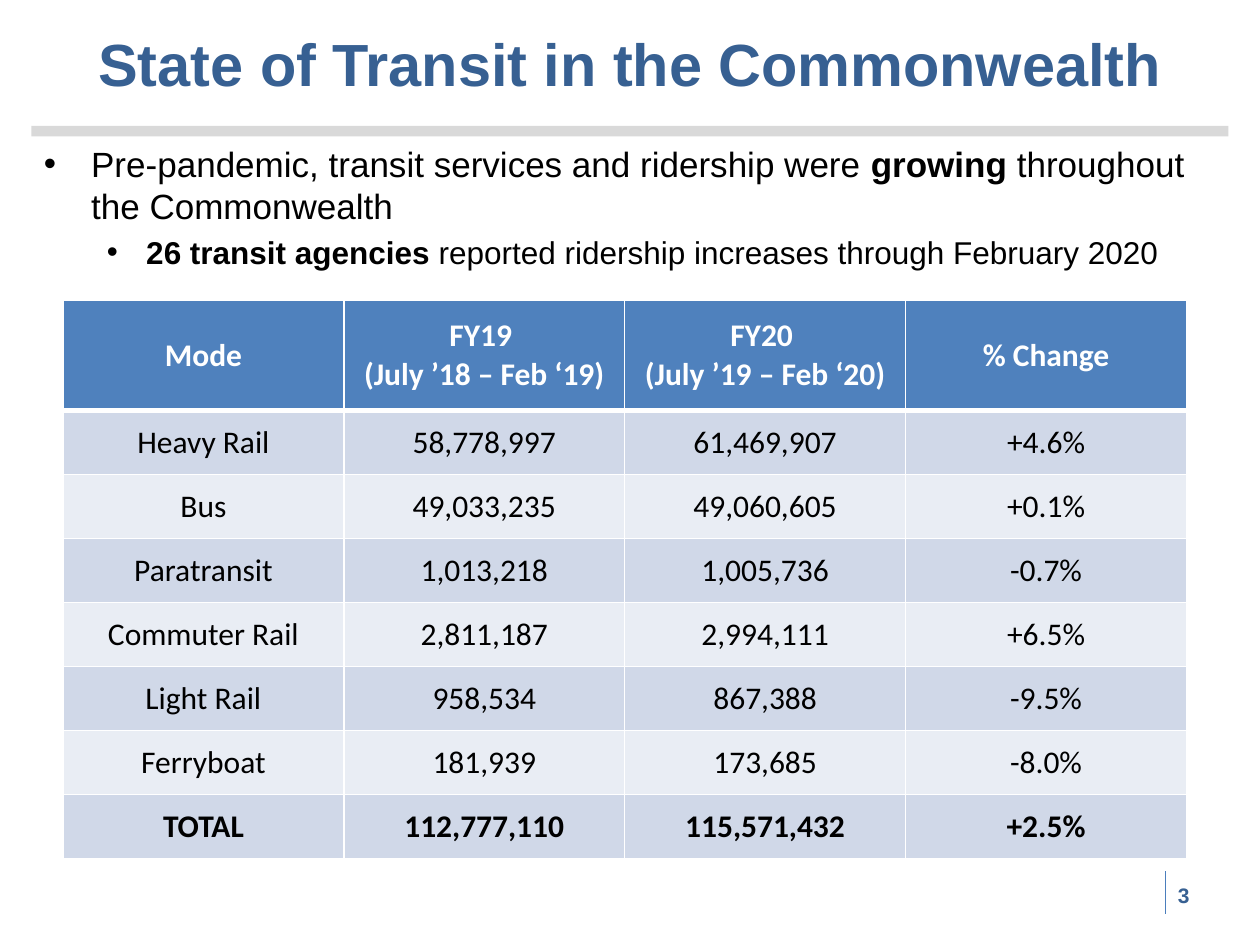
from dataclasses import dataclass

from lxml import etree
from pptx import Presentation
from pptx import util as u
from pptx.dml.color import RGBColor
from pptx.enum import shapes, text
from pptx.oxml import ns

BLUE, BLACK, WHITE = "376092", "000000", "FFFFFF"
HEADER_FILL, BAND_FILLS = "4F81BD", ("D0D8E8", "E9EDF4")


@dataclass(frozen=True)
class Box:
    left: float
    top: float
    width: float
    height: float

    def lengths(self) -> list[u.Length]:
        return [u.Pt(v) for v in (self.left, self.top, self.width, self.height)]


@dataclass(frozen=True)
class Bullet:
    phrases: tuple[tuple[str, bool], ...]  # wording, bold
    size: float
    level: int
    margin: float
    hanging: float
    space_before: float


BULLETS = (
    Bullet((("Pre-pandemic, transit services and ridership were ", False),
            ("growing", True), (" throughout the Commonwealth", False)),
           20, 0, 27, 27, 0),
    Bullet((("26 transit agencies ", True),
            ("reported ridership increases through February 2020", False)),
           18, 1, 58.5, 22.5, 3.6),
)

RIDERSHIP = (
    ("Mode", "FY19 \n(July ’18 – Feb ‘19)", "FY20 \n(July ’19 – Feb ‘20)", "% Change"),
    ("Heavy Rail", "58,778,997", "61,469,907", "+4.6%"),
    ("Bus", "49,033,235", "49,060,605", "+0.1%"),
    ("Paratransit", "1,013,218", "1,005,736", "-0.7%"),
    ("Commuter Rail", "2,811,187", "2,994,111", "+6.5%"),
    ("Light Rail", "958,534", "867,388", "-9.5%"),
    ("Ferryboat", "181,939", "173,685", "-8.0%"),
    ("TOTAL", "112,777,110", "115,571,432", "+2.5%"),
)


def paint(color_format, color: str) -> None:
    """Apply a hex colour to a fill's foreground, a line or a font colour."""
    color_format.rgb = RGBColor.from_string(color)


def fill_solid(target, color: str) -> None:
    target.fill.solid()
    paint(target.fill.fore_color, color)


def add_text(paragraph, wording: str, *, size: float, color: str = BLACK,
             bold: bool = False, font: str = "Arial", align=None) -> None:
    if align is not None:
        paragraph.alignment = align
    run = paragraph.add_run()
    run.text = wording
    run.font.name, run.font.size, run.font.bold = font, u.Pt(size), bold
    paint(run.font.color, color)


def add_frame(slide, box: Box, anchor=text.MSO_ANCHOR.TOP):
    frame = slide.shapes.add_textbox(*box.lengths()).text_frame
    frame.word_wrap = True
    frame.vertical_anchor = anchor
    return frame


def add_bullet(paragraph, bullet: Bullet) -> None:
    properties = paragraph._p.get_or_add_pPr()
    properties.set("marL", str(u.Pt(bullet.margin)))
    properties.set("indent", str(-u.Pt(bullet.hanging)))
    etree.SubElement(properties, ns.qn("a:buFont"), typeface="Arial")
    etree.SubElement(properties, ns.qn("a:buChar"), char="•")
    paragraph.level = bullet.level
    paragraph.space_before = u.Pt(bullet.space_before)
    for wording, bold in bullet.phrases:
        add_text(paragraph, wording, size=bullet.size, bold=bold)


def set_borders(cell, bottom: float, others: float = 1) -> None:
    properties = cell._tc.get_or_add_tcPr()
    widths = {"lnL": others, "lnR": others, "lnT": others, "lnB": bottom}
    for index, (edge, width) in enumerate(widths.items()):
        line = etree.Element(ns.qn(f"a:{edge}"), w=str(u.Pt(width)))
        solid = etree.SubElement(line, ns.qn("a:solidFill"))
        etree.SubElement(solid, ns.qn("a:srgbClr"), val=WHITE)
        properties.insert(index, line)


def add_ridership_table(slide, box: Box, header_height: float) -> None:
    row_count, column_count = len(RIDERSHIP), len(RIDERSHIP[0])
    table = slide.shapes.add_table(row_count, column_count, *box.lengths()).table
    body_height = (box.height - header_height) / (row_count - 1)
    for column in table.columns:
        column.width = u.Pt(box.width / column_count)
    for r, values in enumerate(RIDERSHIP):
        is_header, is_total = r == 0, r == row_count - 1
        table.rows[r].height = u.Pt(header_height if is_header else body_height)
        for c, value in enumerate(values):
            cell = table.cell(r, c)
            cell.vertical_anchor = text.MSO_ANCHOR.MIDDLE
            fill_solid(cell, HEADER_FILL if is_header else BAND_FILLS[(r - 1) % 2])
            set_borders(cell, bottom=3 if is_header else 1)
            for i, wording in enumerate(value.split("\n")):
                frame = cell.text_frame
                paragraph = frame.add_paragraph() if i else frame.paragraphs[0]
                add_text(paragraph, wording, size=18, font="Calibri",
                         color=WHITE if is_header else BLACK,
                         bold=is_header or is_total, align=text.PP_ALIGN.CENTER)


def main() -> None:
    presentation = Presentation()
    presentation.slide_width, presentation.slide_height = u.Pt(720), u.Pt(540)
    slide = presentation.slides.add_slide(presentation.slide_layouts[6])

    # Rule under the title
    rule = slide.shapes.add_shape(shapes.MSO_SHAPE.RECTANGLE,
                                  *Box(18, 72, 684, 6).lengths())
    rule.shadow.inherit = False
    fill_solid(rule, "D9D9D9")
    rule.line.fill.background()

    # Divider beside the page number
    divider = slide.shapes.add_connector(
        shapes.MSO_CONNECTOR.STRAIGHT, u.Pt(666), u.Pt(498), u.Pt(666), u.Pt(522))
    paint(divider.line.color, "4B7EBC")
    divider.line.width = u.Pt(0.75)
    etree.SubElement(divider._element.spPr, ns.qn("a:effectLst"))

    # Title
    title = add_frame(slide, Box(18, 0, 684, 72), text.MSO_ANCHOR.MIDDLE)
    add_text(title.paragraphs[0], "State of Transit in the Commonwealth", size=34,
             color=BLUE, bold=True, align=text.PP_ALIGN.CENTER)

    # Bullets
    body = add_frame(slide, Box(18, 78, 684, 420))
    for i, bullet in enumerate(BULLETS):
        add_bullet(body.add_paragraph() if i else body.paragraphs[0], bullet)

    # Page number
    number = add_frame(slide, Box(666, 497, 30, 29), text.MSO_ANCHOR.MIDDLE)
    add_text(number.paragraphs[0], "3", size=12, color=BLUE, bold=True)

    # Ridership by mode
    add_ridership_table(slide, Box(36, 171.5, 642, 319.2), header_height=63)

    presentation.save("out.pptx")


if __name__ == "__main__":
    main()
